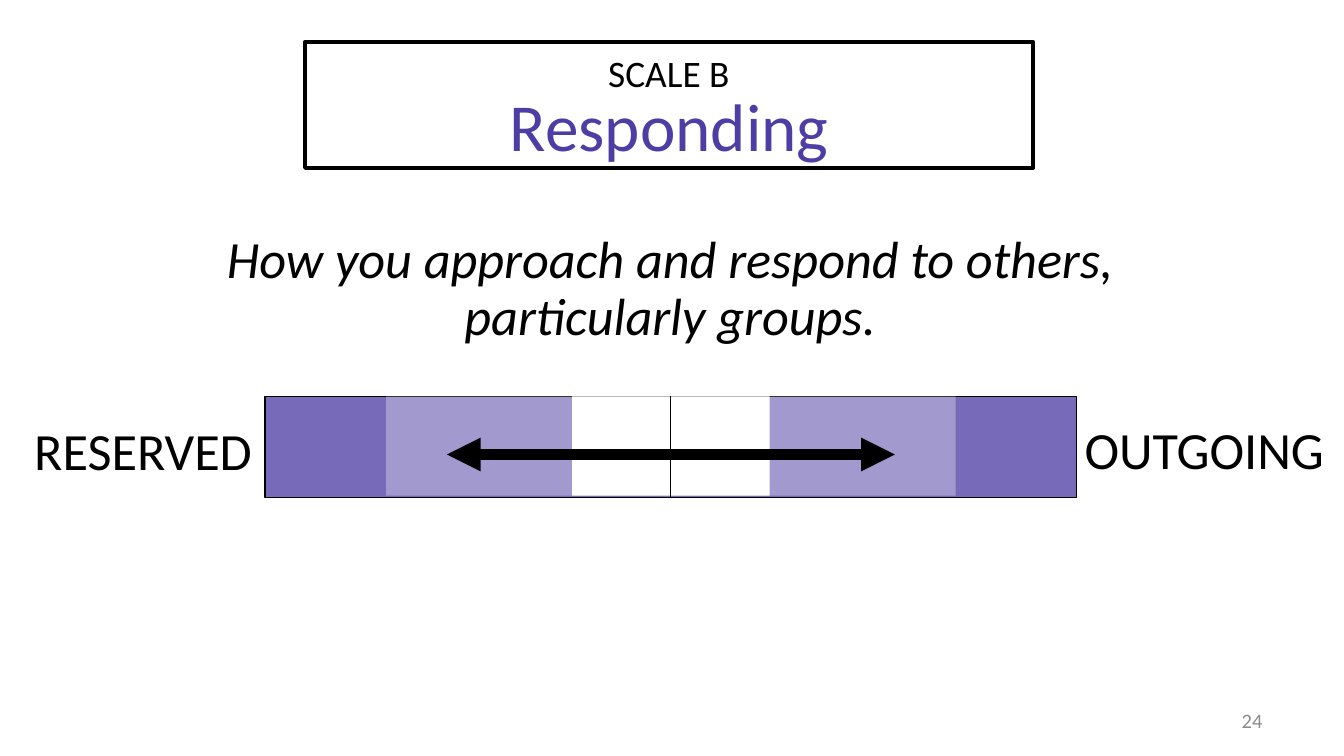
import pptx
import pptx.dml.color
import pptx.enum.shapes
import pptx.enum.text
import pptx.oxml.ns
import pptx.util
from lxml import etree

Pt = pptx.util.Pt
ALIGN = pptx.enum.text.PP_ALIGN
FIT = pptx.enum.text.MSO_AUTO_SIZE
FONT = "Calibri"
BLACK, WHITE, PURPLE, GREY = "000000", "FFFFFF", "4D3DA4", "8C8C8C"

HEADING = dict(text="Responding", box=(264, 41, 189, 51), size=36,
               color=PURPLE, wrap=False)
# Boxes are left, top, width, height in points
LABELS = [
    dict(text="How you approach and respond to others, particularly groups.",
         box=(80, 121, 558, 69), italic=True, spacing=0.9),
    dict(text="RESERVED", box=(8, 220.3, 134, 41), align=ALIGN.RIGHT, wrap=False),
    dict(text="OUTGOING", box=(574, 219.6, 145, 41), align=ALIGN.LEFT, wrap=False),
    dict(text="SCALE B", box=(307.4, 23, 102, 32), size=20),
    dict(text="24", box=(605.5, 375, 78, 21.6), size=11, align=ALIGN.RIGHT,
         color=GREY, fit=FIT.NONE),
]
FRAME = (163.4, 22.4, 390.2, 67.6)

SCALE_CENTER, SCALE_TOP, SCALE_HEIGHT = 359.4, 212.4, 54
ARROW_Y, ARROW_LENGTH = 243.5, 240
# width, height, fill, opacity in percent, outline width
ZONES = [
    (435, SCALE_HEIGHT, PURPLE, 76, 0.75),
    (305.2, 53.2, WHITE, 32, None),
    (105.8, 53.2, WHITE, 100, None),
]


def rgb(color):
    return pptx.dml.color.RGBColor.from_string(color)


def add_xml(parent, tag, **attributes):
    return etree.SubElement(parent, pptx.oxml.ns.qn(tag), **attributes)


def write_text(shape, text, box, size=28, color=BLACK, align=ALIGN.CENTER,
               italic=False, spacing=1.0, wrap=True, fit=FIT.SHAPE_TO_FIT_TEXT):
    shape.left, shape.top, shape.width, shape.height = map(Pt, box)
    frame = shape.text_frame
    frame.text = text
    frame.word_wrap = wrap
    frame.auto_size = fit
    frame.vertical_anchor = pptx.enum.text.MSO_ANCHOR.MIDDLE
    paragraph = frame.paragraphs[0]
    paragraph.alignment = align
    paragraph.line_spacing = spacing
    font = paragraph.font
    font.name, font.size, font.italic = FONT, Pt(size), italic
    font.color.rgb = rgb(color)


def add_rectangle(shapes, box, fill, opacity=100, outline=None):
    rectangle = shapes.add_shape(pptx.enum.shapes.MSO_SHAPE.RECTANGLE, *map(Pt, box))
    rectangle.shadow.inherit = False
    rectangle.fill.solid()
    rectangle.fill.fore_color.rgb = rgb(fill)
    if opacity < 100:
        color = rectangle._element.spPr.find(".//" + pptx.oxml.ns.qn("a:srgbClr"))
        add_xml(color, "a:alpha", val=str(opacity * 1000))
    if outline:
        rectangle.line.color.rgb = rgb(BLACK)
        rectangle.line.width = Pt(outline)
    else:
        rectangle.line.fill.background()


def add_line(shapes, start, end, width, arrows=False):
    line = shapes.add_connector(pptx.enum.shapes.MSO_CONNECTOR.STRAIGHT,
                                *map(Pt, start + end))
    line.line.color.rgb = rgb(BLACK)
    line.line.width = Pt(width)
    if arrows:
        for tag in ("a:headEnd", "a:tailEnd"):
            add_xml(line.line._ln, tag, type="triangle")
    add_xml(line._element.spPr, "a:effectLst")


def add_scale(shapes):
    group = shapes.add_group_shape().shapes
    for width, height, fill, opacity, outline in ZONES:
        box = (SCALE_CENTER - width / 2, SCALE_TOP, width, height)
        add_rectangle(group, box, fill, opacity, outline)
    add_line(group, (SCALE_CENTER, SCALE_TOP),
             (SCALE_CENTER, SCALE_TOP + SCALE_HEIGHT), 0.5)
    add_line(group, (SCALE_CENTER - ARROW_LENGTH / 2, ARROW_Y),
             (SCALE_CENTER + ARROW_LENGTH / 2, ARROW_Y), 6, arrows=True)


def main():
    deck = pptx.Presentation()
    deck.slide_width, deck.slide_height = Pt(720), Pt(405)
    slide = deck.slides.add_slide(deck.slide_layouts.get_by_name("Title Only"))
    shapes = slide.shapes
    heading = shapes.title
    add_rectangle(shapes, FRAME, WHITE, outline=2)
    shapes._spTree.append(heading._element)  # bring the heading above its frame
    write_text(heading, **HEADING)
    for label in LABELS:
        write_text(shapes.add_textbox(*map(Pt, label["box"])), **label)
    add_scale(shapes)
    deck.save("out.pptx")


if __name__ == "__main__":
    main()
